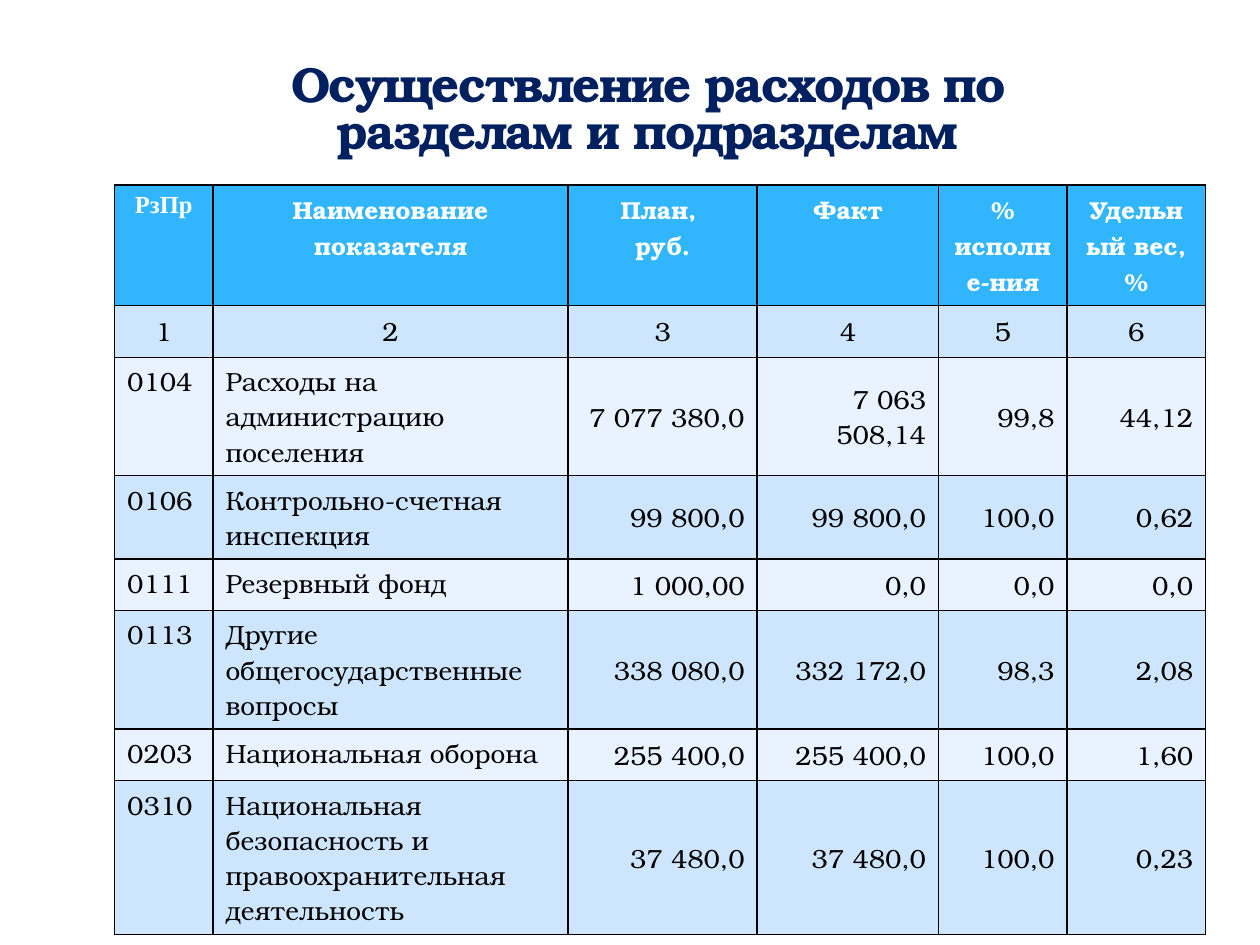
from lxml import etree
from pptx import Presentation
from pptx.dml.color import RGBColor
from pptx.enum.text import MSO_ANCHOR, PP_ALIGN
from pptx.oxml.ns import qn
from pptx.util import Inches, Pt

LEFT, MID, RIGHT = PP_ALIGN.LEFT, PP_ALIGN.CENTER, PP_ALIGN.RIGHT
TOP, CENTER, BOTTOM = MSO_ANCHOR.TOP, MSO_ANCHOR.MIDDLE, MSO_ANCHOR.BOTTOM
SERIF, TIMES = "TeX Gyre Bonum", "Times New Roman"
BLACK, WHITE, NAVY = "000000", "FFFFFF", "002060"
HEAD, DARK, PALE = "31B6FD", "CEE5FE", "E8F3FF"
WIDTHS = [0.78, 2.82, 1.5, 1.44, 1.02, 1.1]
HEADS = ["РзПр", "Наименование показателя", "План, \nруб.", "Факт",
         "% исполне-ния", "Удельный вес, %"]
ROWS = [
    ["1", "2", "3", "4", "5", "6"],
    ["0104", "Расходы на администрацию поселения",
     "7 077 380,0", "7 063 508,14", "99,8", "44,12"],
    ["0106", "Контрольно-счетная инспекция",
     "99 800,0", "99 800,0", "100,0", "0,62"],
    ["0111", "Резервный фонд", "1 000,00", "0,0", "0,0", "0,0"],
    ["0113", "Другие общегосударственные вопросы",
     "338 080,0", "332 172,0", "98,3", "2,08"],
    ["0203", "Национальная оборона",
     "255 400,0", "255 400,0", "100,0", "1,60"],
    ["0310", "Национальная безопасность и правоохранительная деятельность",
     "37 480,0", "37 480,0", "100,0", "0,23"],
]


def color(code):
    return RGBColor.from_string(code)


def write(frame, text, size, tint, bold, align, face=SERIF):
    for num, line in enumerate(text.split("\n")):
        para = frame.add_paragraph() if num else frame.paragraphs[0]
        para.alignment = align
        run = para.add_run()
        run.text = line
        font = run.font
        font.name, font.size, font.bold = face, Pt(size), bold
        font.color.rgb = color(tint)


def border(cell):
    props = cell._tc.get_or_add_tcPr()
    for num, side in enumerate(("lnL", "lnR", "lnT", "lnB")):
        line = etree.Element(qn("a:" + side), w=str(Pt(1)))
        fill = etree.SubElement(line, qn("a:solidFill"))
        etree.SubElement(fill, qn("a:srgbClr"), val=BLACK)
        props.insert(num, line)


def style(cell, fill, anchor):
    cell.fill.solid()
    cell.fill.fore_color.rgb = color(fill)
    cell.vertical_anchor = anchor
    border(cell)


def add_title(slide, left, top, width, height):
    box = slide.shapes.add_textbox(
        Inches(left), Inches(top), Inches(width), Inches(height))
    frame = box.text_frame
    frame.word_wrap = True
    frame.vertical_anchor = BOTTOM
    frame.margin_bottom = 0
    write(frame, "Осуществление расходов по разделам и подразделам",
          28, NAVY, True, MID)
    para = frame.paragraphs[0]
    para.line_spacing = 0.8
    para.runs[0].font._element.set("spc", "-100")


def add_grid(slide, left, top, width, height):
    table = slide.shapes.add_table(
        len(ROWS) + 1, len(WIDTHS), Inches(left), Inches(top),
        Inches(width), Inches(height)).table
    for col, size in zip(table.columns, WIDTHS):
        col.width = Inches(size)
    for row in table.rows:
        row.height = Inches(0.41)
    table.rows[0].height = Inches(0.87)
    for num, text in enumerate(HEADS):
        cell = table.cell(0, num)
        style(cell, HEAD, TOP)
        write(cell.text_frame, text, 14, WHITE, True, MID,
              SERIF if num else TIMES)
    for line, row in enumerate(ROWS, 1):
        for num, text in enumerate(row):
            cell = table.cell(line, num)
            label = line > 1 and num < 2
            align = MID if line == 1 else LEFT if label else RIGHT
            style(cell, DARK if line % 2 else PALE, TOP if label else CENTER)
            write(cell.text_frame, text, 15, BLACK, False, align)


def main():
    deck = Presentation()
    deck.slide_width, deck.slide_height = Inches(10), Inches(7.5)
    slide = deck.slides.add_slide(deck.slide_layouts[6])
    add_grid(slide, 0.91, 1.47, sum(WIDTHS), 3.74)
    add_title(slide, 1.3, 0.76, 7.68, 0.5)
    deck.save("out.pptx")


if __name__ == "__main__":
    main()
